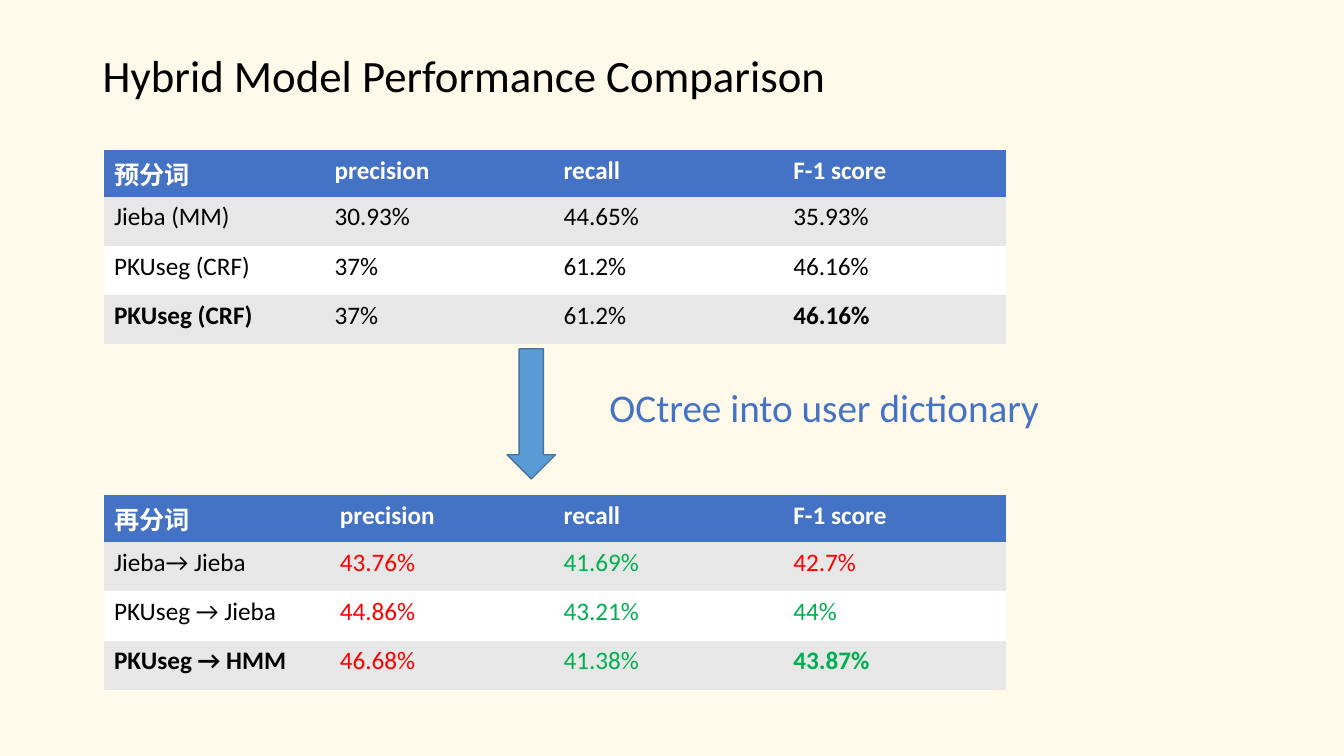
from pptx import Presentation
from pptx.dml.color import RGBColor
from pptx.enum.shapes import MSO_SHAPE
from pptx.oxml.ns import qn
from pptx.util import Cm, Pt

COLORS = {
    "background": "FFF9E9",
    "header": "4472C4",
    "band": "E7E7E7",
    "white": "FFFFFF",
    "black": "000000",
    "red": "FF0000",
    "green": "00B050",
    "arrow": "5B9BD5",
    "arrow_edge": "43739E",
}
NO_GRID_STYLE = "{2D5ABB26-0587-4C30-8999-92F81FD0307C}"
METRICS = ["precision", "recall", "F-1 score"]
WHITE_ROW = ["white"] * 4
BLACK_ROW = ["black"] * 4


def color(name):
    return RGBColor.from_string(COLORS[name])


def style_text(paragraph, text, size, color_name, bold=False):
    paragraph.text = text
    paragraph.font.name = "Calibri"
    paragraph.font.size = Pt(size)
    paragraph.font.bold = bold
    paragraph.font.color.rgb = color(color_name)


deck = Presentation()
deck.slide_width, deck.slide_height = Cm(33.87), Cm(19.05)
slide = deck.slides.add_slide(deck.slide_layouts[6])
slide.background.fill.solid()
slide.background.fill.fore_color.rgb = color("background")

second_pass = [
    (["再分词", *METRICS], WHITE_ROW),
    (["Jieba→ Jieba", "43.76%", "41.69%", "42.7%"], ["black", "red", "green", "red"]),
    (["PKUseg → Jieba", "44.86%", "43.21%", "44%"], ["black", "red", "green", "green"]),
    (["PKUseg → HMM", "46.68%", "41.38%", "43.87%"], ["black", "red", "green", "green"]),
]
first_pass = [
    (["预分词", *METRICS], WHITE_ROW),
    (["Jieba (MM)", "30.93%", "44.65%", "35.93%"], BLACK_ROW),
    (["PKUseg (CRF)", "37%", "61.2%", "46.16%"], BLACK_ROW),
    (["PKUseg (CRF)", "37%", "61.2%", "46.16%"], BLACK_ROW),
]
row_heights = [1.18, 1.24, 1.24, 1.24]
row_fills = ["header", "band", "white", "band"]

for top, widths, rows in [
    (12.48, [5.69, 5.64, 5.79, 5.61], second_pass),
    (3.78, [5.56, 5.77, 5.79, 5.61], first_pass),
]:
    scores = slide.shapes.add_table(
        4, 4, Cm(2.62), Cm(top), Cm(sum(widths)), Cm(sum(row_heights))
    ).table
    scores._tbl.tblPr.find(qn("a:tableStyleId")).text = NO_GRID_STYLE
    scores.horz_banding = False
    for column, width in zip(scores.columns, widths):
        column.width = Cm(width)
    for r, (texts, text_colors) in enumerate(rows):
        scores.rows[r].height = Cm(row_heights[r])
        for c, (text, text_color) in enumerate(zip(texts, text_colors)):
            cell = scores.cell(r, c)
            cell.fill.solid()
            cell.fill.fore_color.rgb = color(row_fills[r])
            bold = r == 0 or (r == 3 and c in (0, 3))
            style_text(cell.text_frame.paragraphs[0], text, 18, text_color, bold)

arrow = slide.shapes.add_shape(
    MSO_SHAPE.DOWN_ARROW, Cm(12.78), Cm(8.79), Cm(1.22), Cm(3.28)
)
arrow.shadow.inherit = False
arrow.fill.solid()
arrow.fill.fore_color.rgb = color("arrow")
arrow.line.color.rgb = color("arrow_edge")
arrow.line.width = Pt(1)

for text, size, color_name, left, top, width, height in [
    ("Hybrid Model Performance Comparison", 32, "black", 2.34, 1.07, 19.15, 1.63),
    ("OCtree into user dictionary", 28, "header", 15.11, 9.53, 14.88, 1.45),
]:
    caption = slide.shapes.add_textbox(Cm(left), Cm(top), Cm(width), Cm(height))
    caption.text_frame.word_wrap = True
    style_text(caption.text_frame.paragraphs[0], text, size, color_name)

deck.save("out.pptx")
